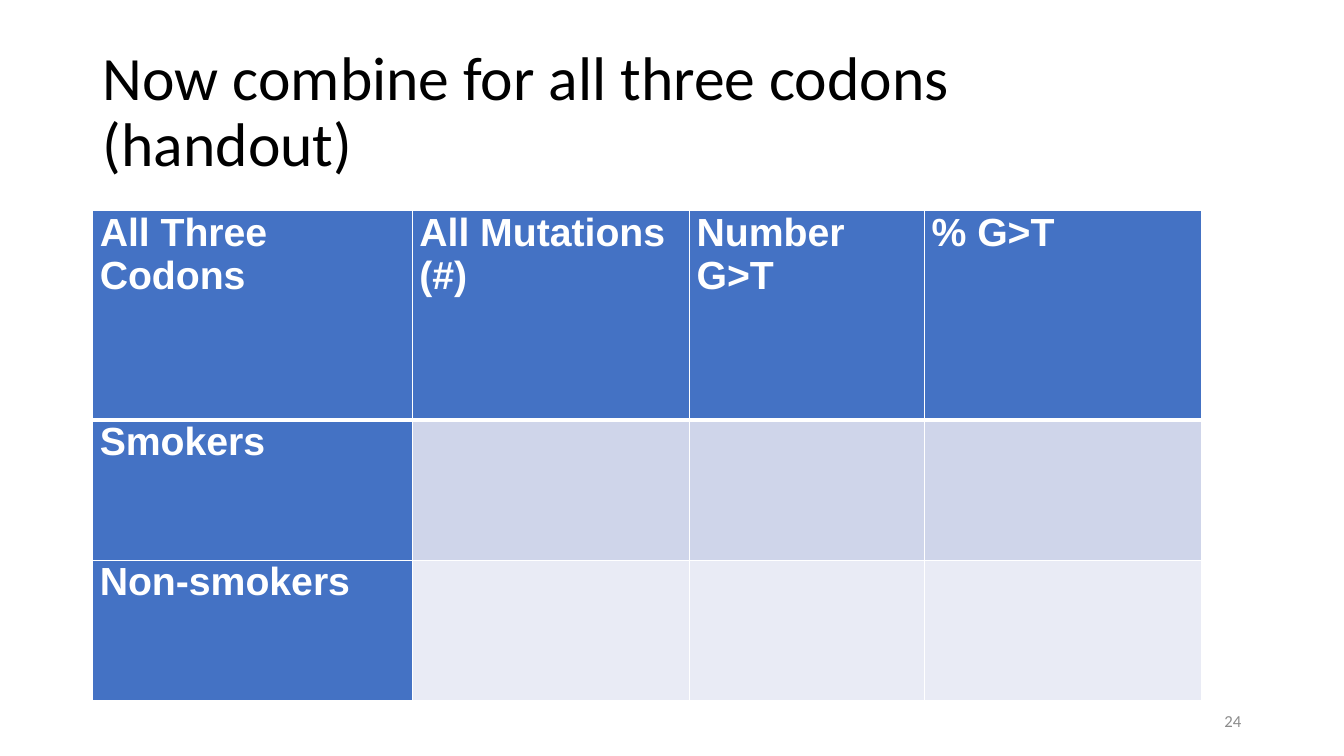
import dataclasses

import pptx
import pptx.dml.color
import pptx.enum.text
import pptx.oxml.ns
import pptx.util
from lxml import etree

Inches = pptx.util.Inches
Pt = pptx.util.Pt
RGB = pptx.dml.color.RGBColor.from_string
Align = pptx.enum.text.PP_ALIGN
Anchor = pptx.enum.text.MSO_ANCHOR


@dataclasses.dataclass(frozen=True)
class Theme:
    title_font: str = "Calibri"
    table_font: str = "Arial"
    title_size: int = 44
    table_size: int = 28
    number_size: int = 12
    ink: str = "000000"
    muted: str = "8C8C8C"
    white: str = "FFFFFF"
    header: str = "4472C4"
    bands: tuple = ("CFD5EA", "E9EBF5")
    thin: int = 1
    thick: int = 3


THEME = Theme()
WIDTH, HEIGHT = 13.33, 7.5
MARGIN = 0.92
CONTENT_WIDTH = WIDTH - 2 * MARGIN
COLUMNS = (3.17, 2.75, 2.33, 2.75)
ROWS = (2.08, 1.39, 1.39)
HEADINGS = ("All Three Codons", "All Mutations (#)", "Number G>T", "% G>T")
GROUPS = ("Smokers", "Non-smokers")


def style(para, font, size, color, align=Align.LEFT, bold=False):
    para.alignment = align
    para.font.name = font
    para.font.size = Pt(size)
    para.font.bold = bold
    para.font.color.rgb = RGB(color)


def place(shape, left, top, width, height):
    shape.left, shape.top = Inches(left), Inches(top)
    shape.width, shape.height = Inches(width), Inches(height)


def add_title(page, text):
    title = page.shapes.title
    place(title, MARGIN, 0.4, CONTENT_WIDTH, 1.45)
    frame = title.text_frame
    frame.text = text
    frame.word_wrap = True
    frame.auto_size = pptx.enum.text.MSO_AUTO_SIZE.NONE
    frame.vertical_anchor = Anchor.MIDDLE
    para = frame.paragraphs[0]
    para.line_spacing = 0.9
    style(para, THEME.title_font, THEME.title_size, THEME.ink)


def set_borders(cell, bottom):
    properties = cell._tc.get_or_add_tcPr()
    qn = pptx.oxml.ns.qn
    widths = {"L": THEME.thin, "R": THEME.thin, "T": THEME.thin, "B": bottom}
    for side, width in widths.items():
        line = etree.SubElement(properties, qn(f"a:ln{side}"), w=str(Pt(width)))
        fill = etree.SubElement(line, qn("a:solidFill"))
        etree.SubElement(fill, qn("a:srgbClr"), val=THEME.white)


def format_cell(cell, text, fill, bottom):
    cell.margin_left = cell.margin_right = Inches(0.07)
    cell.margin_top = cell.margin_bottom = 0
    cell.text = text
    style(cell.text_frame.paragraphs[0], THEME.table_font, THEME.table_size,
          THEME.white, bold=True)
    set_borders(cell, bottom)
    cell.fill.solid()
    cell.fill.fore_color.rgb = RGB(fill)


def add_mutation_table(page):
    table = page.shapes.add_table(
        len(ROWS), len(COLUMNS), Inches(MARGIN), Inches(2.09),
        Inches(sum(COLUMNS)), Inches(sum(ROWS))).table
    for column, width in zip(table.columns, COLUMNS):
        column.width = Inches(width)
    for row, height in zip(table.rows, ROWS):
        row.height = Inches(height)

    blanks = ("",) * (len(COLUMNS) - 1)
    content = [HEADINGS] + [(group,) + blanks for group in GROUPS]
    for r, texts in enumerate(content):
        for c, text in enumerate(texts):
            fill = THEME.bands[r - 1] if r and c else THEME.header
            bottom = THEME.thin if r else THEME.thick
            format_cell(table.cell(r, c), text, fill, bottom)


def add_page_number(page, number):
    width = 3
    box = page.shapes.add_textbox(
        Inches(WIDTH - MARGIN - width), Inches(6.95), Inches(width), Inches(0.4))
    frame = box.text_frame
    frame.word_wrap = True
    frame.vertical_anchor = Anchor.MIDDLE
    frame.text = str(number)
    style(frame.paragraphs[0], THEME.title_font, THEME.number_size,
          THEME.muted, Align.RIGHT)


def main():
    deck = pptx.Presentation()
    deck.slide_width, deck.slide_height = Inches(WIDTH), Inches(HEIGHT)
    title_only = deck.slide_layouts.get_by_name("Title Only")
    page = deck.slides.add_slide(title_only)
    add_title(page, "Now combine for all three codons\v(handout)")
    add_mutation_table(page)
    add_page_number(page, 24)
    deck.save("out.pptx")


if __name__ == "__main__":
    main()
